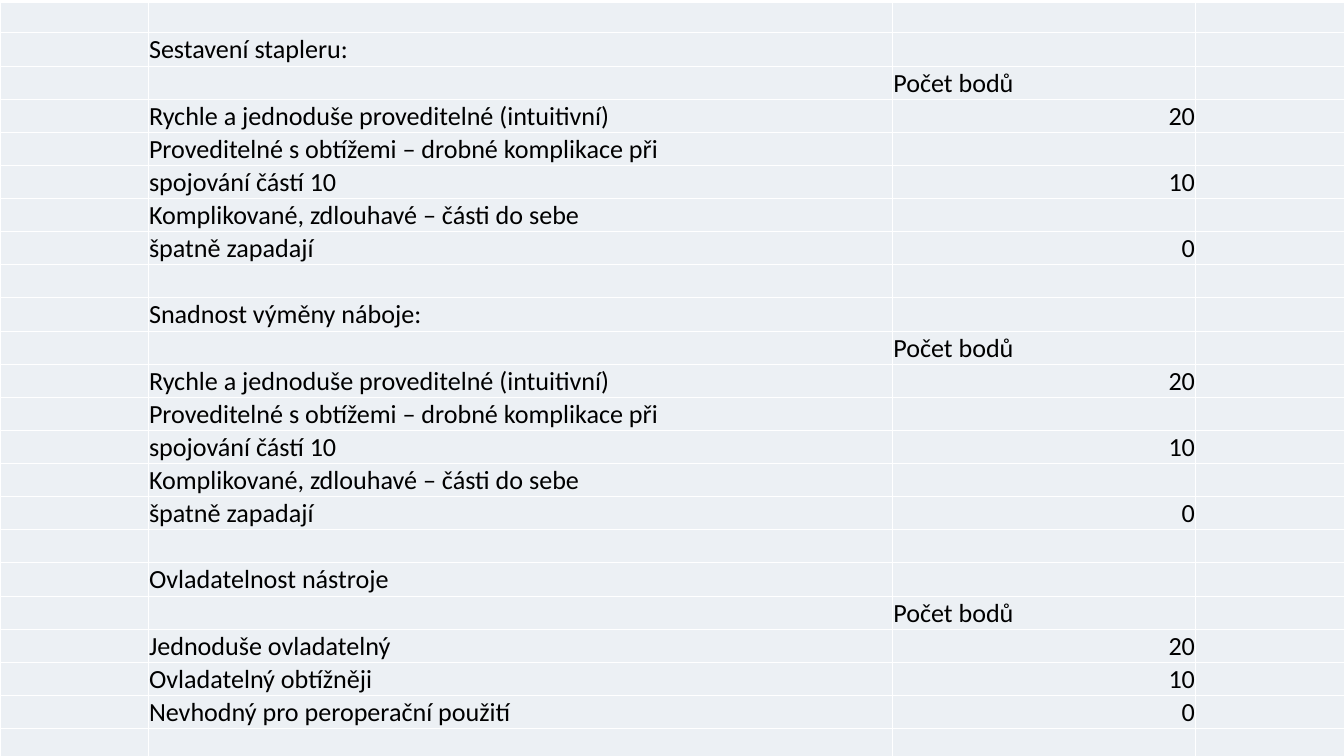
from pptx import Presentation
from pptx.dml.color import RGBColor
from pptx.enum.text import MSO_ANCHOR, PP_ALIGN
from pptx.oxml import parse_xml
from pptx.oxml.ns import nsdecls
from pptx.util import Pt

BOTTOM = MSO_ANCHOR.BOTTOM
LEFT = PP_ALIGN.LEFT
RIGHT = PP_ALIGN.RIGHT

FONT = "Calibri"
TEXT_COLOR = "000000"
CELL_COLOR = "ECF0F4"
BORDER_COLOR = "FFFFFF"


def color(value):
    return RGBColor.from_string(value)


def add_borders(cell):
    properties = cell._tc.get_or_add_tcPr()
    for side in ("lnL", "lnR", "lnT", "lnB"):
        properties.append(parse_xml(
            f'<a:{side} {nsdecls("a")} w="{Pt(1)}"><a:solidFill>'
            f'<a:srgbClr val="{BORDER_COLOR}"/></a:solidFill></a:{side}>'
        ))


assembly_ratings = [
    ("Rychle a jednoduše proveditelné (intuitivní)", "20"),
    ("Proveditelné s obtížemi – drobné komplikace při", ""),
    ("spojování částí 10", "10"),
    ("Komplikované, zdlouhavé – části do sebe", ""),
    ("špatně zapadají", "0"),
]
handling_ratings = [
    ("Jednoduše ovladatelný", "20"),
    ("Ovladatelný obtížněji", "10"),
    ("Nevhodný pro peroperační použití", "0"),
]
sections = [
    ("Sestavení stapleru:", assembly_ratings),
    ("Snadnost výměny náboje:", assembly_ratings),
    ("Ovladatelnost nástroje", handling_ratings),
]

rows = [("", "")]
for title, ratings in sections:
    rows += [(title, ""), ("", "Počet bodů"), *ratings, ("", "")]

column_widths = [159, 797.5, 324.5, 159]
row_heights = [32.25] + [35.5] * (len(rows) - 2) + [32.25]

presentation = Presentation()
presentation.slide_width = Pt(1440)
presentation.slide_height = Pt(810)
slide = presentation.slides.add_slide(presentation.slide_layouts[6])

table = slide.shapes.add_table(
    len(rows), len(column_widths), Pt(0), Pt(3), Pt(1440), Pt(810)
).table
table.first_row = False
table.horz_banding = False
for column, width in zip(table.columns, column_widths):
    column.width = Pt(width)

for row, height, (label, points) in zip(table.rows, row_heights, rows):
    row.height = Pt(height)
    for cell, text in zip(row.cells, ("", label, points, "")):
        add_borders(cell)
        cell.fill.solid()
        cell.fill.fore_color.rgb = color(CELL_COLOR)
        if not text:
            continue
        cell.vertical_anchor = BOTTOM
        cell.margin_left = cell.margin_right = cell.margin_top = Pt(0.7)
        cell.margin_bottom = Pt(0)
        paragraph = cell.text_frame.paragraphs[0]
        paragraph.alignment = RIGHT if text.isdigit() else LEFT
        run = paragraph.add_run()
        run.text = text
        run.font.name = FONT
        run.font.size = Pt(28)
        run.font.color.rgb = color(TEXT_COLOR)

presentation.save("out.pptx")
